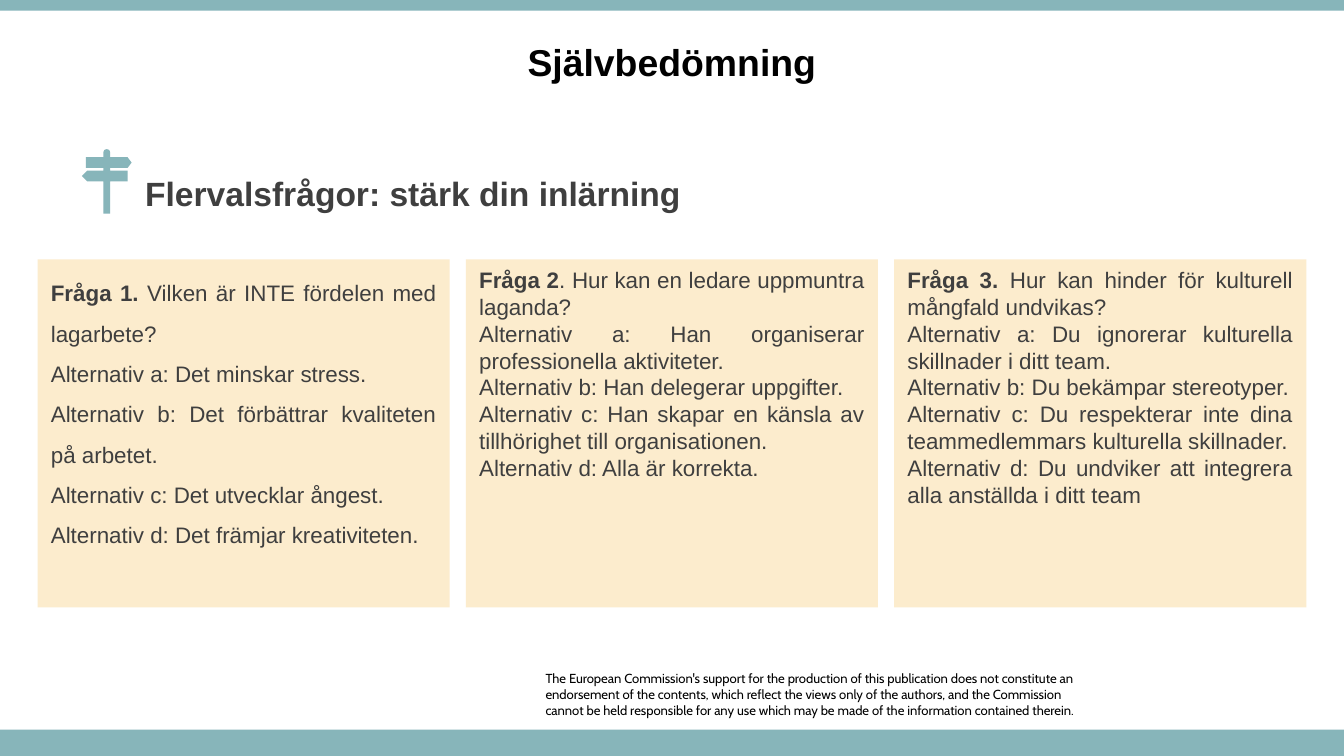
from dataclasses import dataclass
from math import cos, pi, sin

from pptx import Presentation
from pptx.dml.color import RGBColor
from pptx.enum.shapes import MSO_SHAPE
from pptx.enum.text import MSO_ANCHOR, MSO_AUTO_SIZE, PP_ALIGN
from pptx.oxml.ns import qn
from pptx.util import Inches, Pt


@dataclass(frozen=True)
class Theme:
    """Colours, fonts and type sizes of the slide."""
    teal: str = "87B5BA"
    cream: str = "FCECCD"
    ink: str = "3F3F3F"
    black: str = "000000"
    font: str = "Arial"
    small: str = "Cabin"
    title: int = 20
    head: int = 18
    body: int = 12
    note: int = 7


THEME = Theme()

CARDS = [
    ("Fråga 1. ", 1.5, [
        "Vilken är INTE fördelen med lagarbete?",
        "Alternativ a: Det minskar stress.",
        "Alternativ b: Det förbättrar kvaliteten på arbetet.",
        "Alternativ c: Det utvecklar ångest.",
        "Alternativ d: Det främjar kreativiteten."]),
    ("Fråga 2", 1.0, [
        ". Hur kan en ledare uppmuntra laganda?",
        "Alternativ a: Han organiserar professionella aktiviteter.",
        "Alternativ b: Han delegerar uppgifter.",
        "Alternativ c: Han skapar en känsla av tillhörighet till organisationen.",
        "Alternativ d: Alla är korrekta."]),
    ("Fråga 3. ", 1.0, [
        "Hur kan hinder för kulturell mångfald undvikas?",
        "Alternativ a: Du ignorerar kulturella skillnader i ditt team.",
        "Alternativ b: Du bekämpar stereotyper.",
        "Alternativ c: Du respekterar inte dina teammedlemmars kulturella skillnader.",
        "Alternativ d: Du undviker att integrera alla anställda i ditt team"]),
]

NOTE = [
    "The European Commission's support for the production of this publication "
    "does not constitute an endorsement of the contents, which reflect the views "
    "only of the authors, and the Commission",
    "cannot be held responsible for any use which may be made of the information "
    "contained therein.",
]


def style(para, size, color, face=THEME.font, bold=None):
    """Set the font of a paragraph."""
    font = para.font
    font.name, font.size, font.bold = face, Pt(size), bold
    font.color.rgb = RGBColor.from_string(color)


def paint(shape, color):
    """Give a shape a flat fill with no line or shadow."""
    shape.shadow.inherit = False
    shape.fill.solid()
    shape.fill.fore_color.rgb = RGBColor.from_string(color)
    shape.line.fill.background()


def add_rect(slide, box, color):
    """Add a flat rectangle in the box."""
    shape = slide.shapes.add_shape(MSO_SHAPE.RECTANGLE, *map(Inches, box))
    paint(shape, color)
    return shape


def fill_holder(holder, box, text, size, color, align):
    """Move a placeholder into the box and write one bold line."""
    holder.left, holder.top, holder.width, holder.height = map(Inches, box)
    frame = holder.text_frame
    frame.text = text
    frame.auto_size = MSO_AUTO_SIZE.NONE
    frame.vertical_anchor = MSO_ANCHOR.MIDDLE
    para = frame.paragraphs[0]
    props = para._p.get_or_add_pPr()
    props.set("marL", "0")
    props.set("indent", "0")
    props.append(props.makeelement(qn("a:buNone"), {}))
    para.alignment = align
    para.space_before = Pt(0)
    style(para, size, color, bold=True)


def add_sign(slide, box):
    """Draw the signpost, with its outline in thousandths of an inch."""
    left, top, width, height = box
    wide, tall = width * 1000, height * 1000
    mid, half = wide / 2, 25
    near, far = mid - half, mid + half
    cap = [(mid + half * cos(pi * step / 8), half - half * sin(pi * step / 8))
           for step in range(9)]
    post = [(near, 60), (30, 60), (30, 140), (near, 140), (near, 160),
            (40, 160), (0, 200), (40, 240), (near, 240), (near, tall),
            (far, tall), (far, 240), (340, 240), (340, 160), (far, 160),
            (far, 140), (340, 140), (wide, 100), (340, 60), (far, 60)]
    pen = slide.shapes.build_freeform(*cap[0], scale=Inches(0.01) / 10)
    pen.add_line_segments(cap[1:] + post, close=True)
    paint(pen.convert_to_shape(Inches(left), Inches(top)), THEME.teal)


def add_card(slide, box, label, space, lines):
    """Add a question card with a bold label."""
    frame = add_rect(slide, box, THEME.cream).text_frame
    frame.word_wrap = True
    frame.vertical_anchor = MSO_ANCHOR.TOP
    for index, line in enumerate(lines):
        para = frame.add_paragraph() if index else frame.paragraphs[0]
        if not index:
            run = para.add_run()
            run.text, run.font.bold = label, True
        para.add_run().text = line
        para.alignment = PP_ALIGN.JUSTIFY
        para.line_spacing = space
        style(para, THEME.body, THEME.ink)


def add_cards(slide, box, cards, gap=0.12):
    """Spread the cards evenly across the box."""
    left, top, width, height = box
    size = (width - gap * (len(cards) - 1)) / len(cards)
    for index, card in enumerate(cards):
        spot = left + index * (size + gap)
        add_card(slide, (spot, top, size, height), *card)


def add_note(slide, box):
    """Write the funding note."""
    frame = slide.shapes.add_textbox(*map(Inches, box)).text_frame
    frame.word_wrap = True
    frame.margin_left = frame.margin_right = 0
    frame.margin_top = frame.margin_bottom = 0
    for index, line in enumerate(NOTE):
        para = frame.add_paragraph() if index else frame.paragraphs[0]
        para.text = line
        style(para, THEME.note, THEME.black, THEME.small)


def main():
    """Build and save the slide."""
    deck = Presentation()
    deck.slide_width = Inches(10)
    deck.slide_height = Inches(10 * 9 / 16)
    slide = deck.slides.add_slide(deck.slide_layouts[1])
    title, head = slide.placeholders
    add_note(slide, (4.06, 4.99, 4.17, 0.35))
    add_rect(slide, (0, 5.43, 10, 0.2), THEME.teal)
    add_rect(slide, (0, 0, 10, 0.08), THEME.teal)
    fill_holder(title, (0, 0.14, 10, 0.63), "Självbedömning",
                THEME.title, THEME.black, PP_ALIGN.CENTER)
    fill_holder(head, (0.98, 1.28, 6.69, 0.31),
                "Flervalsfrågor: stärk din inlärning",
                THEME.head, THEME.ink, PP_ALIGN.LEFT)
    add_sign(slide, (0.61, 1.11, 0.37, 0.48))
    add_cards(slide, (0.28, 1.93, 9.44, 2.59), CARDS)
    deck.save("out.pptx")


if __name__ == "__main__":
    main()
